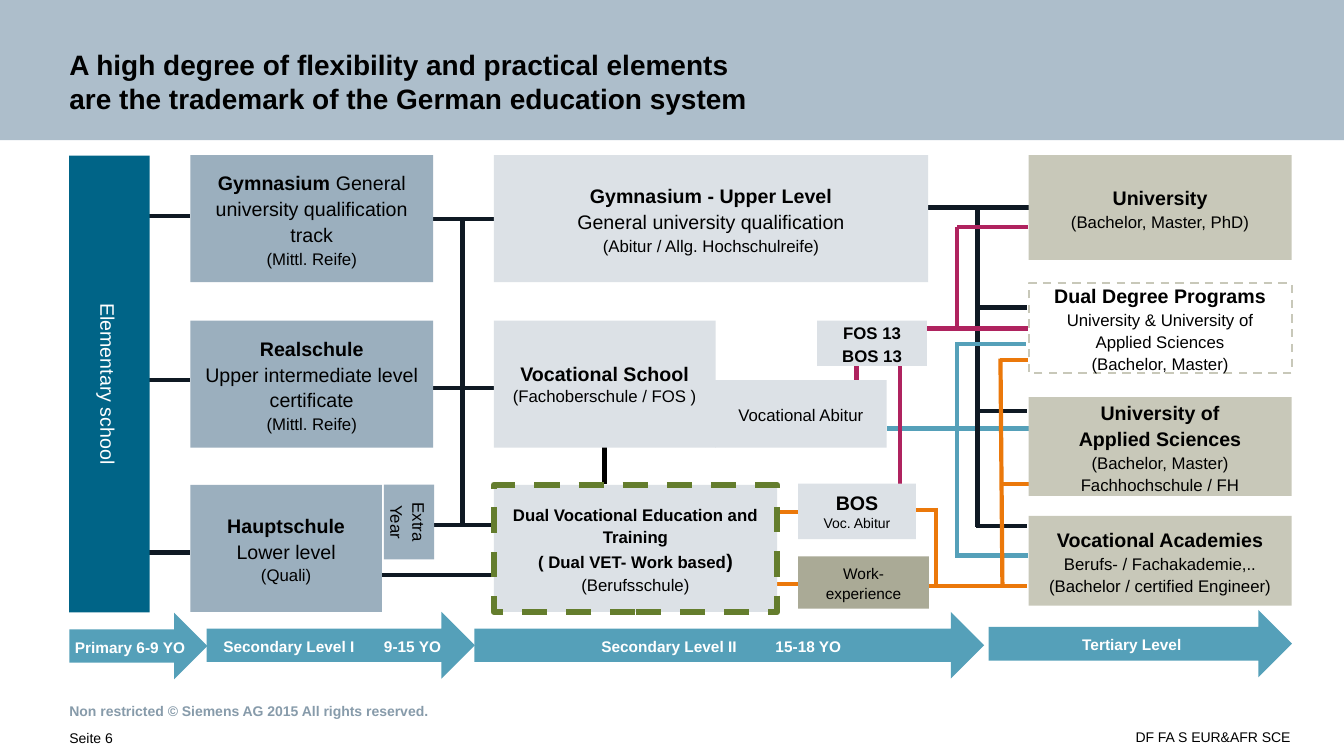
from dataclasses import dataclass

from lxml.etree import SubElement
from pptx import Presentation
from pptx.dml.color import RGBColor
from pptx.enum.dml import MSO_LINE
from pptx.enum.shapes import MSO_CONNECTOR, MSO_SHAPE
from pptx.enum.text import MSO_ANCHOR, PP_ALIGN
from pptx.oxml.ns import qn
from pptx.util import Cm, Pt


@dataclass(frozen=True)
class Theme:
    font: str = "Arial"
    black: str = "000000"
    white: str = "FFFFFF"
    banner: str = "ADBECB"
    footer: str = "879BAA"
    petrol: str = "006487"
    slate: str = "9BAFBE"
    light: str = "DCE1E6"
    sand: str = "C8C8B9"
    stone: str = "AAAA96"
    olive: str = "647D2D"
    navy: str = "0F1923"
    blue: str = "55A0B9"
    berry: str = "AF235F"
    orange: str = "EB780A"
    title: int = 20
    head: int = 14
    body: int = 12
    label: int = 11
    small: int = 10


T = Theme()
PADDING = (0.3, 0.15, 0.3, 0.15)
ROWS = (3.91, 8.08, 12.22)
ROW_H = 3.2
LEVEL_1_X, LEVEL_2_X, LEVEL_3_X = 4.8, 12.45, 25.93
LEVEL_3_W = 6.63


def rgb(color):
    return RGBColor.from_string(color)


def write(sp, paragraphs, size=T.body, bold=False, color=T.black, align=PP_ALIGN.CENTER,
          anchor=MSO_ANCHOR.MIDDLE, insets=PADDING, spacing=1.1, tab=None):
    """Each paragraph is a list of (text, size, bold) runs, or plain text."""
    tf = sp.text_frame
    tf.word_wrap = True
    tf.vertical_anchor = anchor
    tf.margin_left, tf.margin_top, tf.margin_right, tf.margin_bottom = map(Cm, insets)
    for i, runs in enumerate(paragraphs):
        p = tf.add_paragraph() if i else tf.paragraphs[0]
        p.alignment, p.line_spacing = align, spacing
        if tab:
            tabs = SubElement(p._p.get_or_add_pPr(), qn("a:tabLst"))
            SubElement(tabs, qn("a:tab"), pos=str(Cm(tab)), algn="l")
        if isinstance(runs, str):
            runs = [(runs, size, bold)]
        for text, run_size, run_bold in runs:
            for n, part in enumerate(text.split("\n")):
                if n:
                    p.add_line_break()
                r = p.add_run()
                r.text = part
                r.font.name, r.font.size, r.font.bold = T.font, Pt(run_size), run_bold
                r.font.color.rgb = rgb(color)


def head(text):
    return [(text, T.head, True)]


def lead(text):
    return [(text, T.head, False)]


def add_box(s, x, y, w, h, paragraphs=(), fill=None, border=None, shape=MSO_SHAPE.RECTANGLE,
            rotation=0, **fmt):
    sp = s.shapes.add_shape(shape, Cm(x), Cm(y), Cm(w), Cm(h))
    sp.shadow.inherit = False
    sp.rotation = rotation
    if fill:
        sp.fill.solid()
        sp.fill.fore_color.rgb = rgb(fill)
    else:
        sp.fill.background()
    if border:
        color, width = border
        sp.line.color.rgb = rgb(color)
        sp.line.width = Pt(width)
        sp.line.dash_style = MSO_LINE.DASH
    else:
        sp.line.fill.background()
    write(sp, paragraphs, **fmt)


def add_text(s, x, y, w, h, text, **fmt):
    write(s.shapes.add_textbox(Cm(x), Cm(y), Cm(w), Cm(h)), [text], **fmt)


def add_arrow(s, x, y, w, h, text, **fmt):
    add_box(s, x, y, w, h, [text], T.blue, shape=MSO_SHAPE.RIGHT_ARROW,
            size=T.label, bold=True, color=T.white, **fmt)


def add_lines(s, color, lines):
    for x1, y1, x2, y2 in lines:
        line = s.shapes.add_connector(MSO_CONNECTOR.STRAIGHT, Cm(x1), Cm(y1), Cm(x2), Cm(y2))
        line.line.color.rgb = rgb(color)
        line.line.width = Pt(3)
        SubElement(line._element.spPr, qn("a:effectLst"))


def add_frame(s):
    add_box(s, 0, 0, 33.88, 3.53, fill=T.banner)
    add_text(s, 0, 0, 33.88, 3.53,
             "A high degree of flexibility and practical elements\n"
             "are the trademark of the German education system",
             size=T.title, bold=True, align=PP_ALIGN.LEFT, anchor=MSO_ANCHOR.BOTTOM,
             insets=(1.75, 1.09, 5.89, 0.66), spacing=1.0)
    add_text(s, 0, 17.12, 33.88, 1.19, "Non restricted © Siemens AG 2015 All rights reserved.",
             size=T.small, bold=True, color=T.footer, align=PP_ALIGN.LEFT,
             insets=(1.75, 0.41, 8.92, 0), spacing=1.0)
    add_text(s, 0, 18.34, 4.9, 0.71, "Seite 6", size=T.small, align=PP_ALIGN.LEFT,
             anchor=MSO_ANCHOR.TOP, insets=(1.75, 0, 0, 0.33))
    add_text(s, 10.52, 18.31, 23.36, 0.71, "DF FA S EUR&AFR SCE", size=T.small,
             align=PP_ALIGN.RIGHT, anchor=MSO_ANCHOR.TOP, insets=(0, 0, 1.35, 0.33))


def add_routes(s):
    add_lines(s, T.blue, [(22.35, 10.8, 25.93, 10.8)])
    add_lines(s, T.black, [(15.24, 12.19, 15.24, 11.25)])
    # Elementary school to level I, level I to level II, upper level to tertiary
    add_lines(s, T.navy, [(3.4, y, LEVEL_1_X, y) for y in (5.44, 9.58, 13.92)])
    add_lines(s, T.navy, [
        (11.66, 5.54, 11.66, 13.26), (10.9, 5.52, 12.45, 5.52), (10.9, 9.78, 12.45, 9.78),
        (10.95, 13.23, 12.45, 13.23), (9.63, 14.48, 12.45, 14.48),
        (23.37, 5.23, 25.93, 5.23), (24.64, 5.26, 24.64, 13.28)])
    add_lines(s, T.navy, [(24.61, y, 25.88, y) for y in (7.75, 10.36, 13.26)])
    # FOS 13 / BOS 13
    add_lines(s, T.berry, [
        (21.59, 9.58, 21.59, 9.19), (22.68, 12.19, 22.68, 9.19), (24.13, 8.28, 24.13, 5.72),
        (24.13, 5.72, 25.91, 5.72), (23.32, 8.28, 25.91, 8.28)])
    # Vocational Abitur
    add_lines(s, T.blue, [
        (24.13, 8.66, 24.13, 14.05), (24.08, 8.66, 25.86, 8.66), (24.13, 14, 25.91, 14)])
    # Dual VET, BOS and work experience
    add_lines(s, T.orange, [
        (20.12, 14.71, 19.56, 14.71), (20.12, 12.9, 19.56, 12.9), (23.6, 12.85, 23.06, 12.85),
        (23.6, 12.8, 23.6, 14.78), (23.39, 14.76, 25.88, 14.76), (25.22, 9.04, 25.27, 14.81),
        (25.22, 9.07, 25.91, 9.07), (25.27, 12.19, 26.01, 12.19)])


def add_schools(s):
    # Primary and secondary level I
    add_box(s, -3, 8.66, 11.51, 2.03, ["Elementary school"], T.petrol, rotation=90,
            size=T.head, color=T.white)
    level_1 = [
        (6.12, [[("Gymnasium ", T.head, True),
                 ("General university qualification track", T.head, False)], "(Mittl. Reife)"]),
        (6.12, [head("Realschule"), lead("Upper intermediate level certificate"),
                "(Mittl. Reife)"]),
        (4.83, [head("Hauptschule"), lead("Lower level"), "(Quali)"])]
    for y, (w, text) in zip(ROWS, level_1):
        add_box(s, LEVEL_1_X, y, w, ROW_H, text, T.slate)
    add_box(s, 9.37, 12.52, 1.88, 1.27, ["Extra Year"], T.slate, rotation=90)

    # Secondary level II
    add_box(s, LEVEL_2_X, ROWS[0], 10.95, ROW_H,
            [head("Gymnasium - Upper Level"), lead("General university qualification"),
             "(Abitur / Allg. Hochschulreife)"], T.light)
    add_box(s, LEVEL_2_X, ROWS[1], 5.59, ROW_H,
            [head("Vocational School"), "(Fachoberschule / FOS )"], T.light, spacing=1.0)
    add_box(s, LEVEL_2_X, ROWS[2], 7.14, ROW_H,
            [[("Dual Vocational Education and Training", T.body, True)],
             [("( Dual VET- Work based", T.body, True), (")", T.head, True)],
             "(Berufsschule)"], T.light, border=(T.olive, 4.5))
    add_box(s, 18.03, 9.58, 4.32, 1.7, ["Vocational Abitur"], T.light)
    add_box(s, 20.6, ROWS[1], 2.77, 1.14, ["FOS 13 BOS 13"], T.light, bold=True)
    add_box(s, 20.12, 12.19, 2.97, 1.4, [head("BOS"), [("Voc. Abitur", T.small, False)]],
            T.light, spacing=1.0)
    add_box(s, 20.12, 14.02, 3.3, 1.32, ["Work- experience"], T.stone, size=T.label)

    # Tertiary level
    level_3 = [
        (3.91, 2.64, T.sand, None, [head("University"), "(Bachelor, Master, PhD)"]),
        (7.14, 2.26, None, (T.sand, 1.5),
         [head("Dual Degree Programs"),
          "University & University of Applied Sciences\n(Bachelor, Master)"]),
        (10.01, 2.49, T.sand, None,
         [head("University of"), head("Applied Sciences"),
          "(Bachelor, Master) Fachhochschule / FH"]),
        (13, 2.26, T.sand, None,
         [head("Vocational Academies"),
          "Berufs- / Fachakademie,..\n(Bachelor / certified Engineer)"])]
    for y, h, fill, border, text in level_3:
        add_box(s, LEVEL_3_X, y, LEVEL_3_W, h, text, fill, border)


def add_timeline(s):
    add_arrow(s, 1.75, 15.44, 3.48, 1.68, "Primary 6-9 YO", insets=(0, 0.15, 0, 0.15))
    add_arrow(s, 5.21, 15.42, 6.76, 1.68, "Secondary Level I\t9-15 YO",
              align=PP_ALIGN.LEFT, insets=(0.42, 0.15, 0, 0.15), tab=4.05)
    add_arrow(s, 11.96, 15.42, 12.85, 1.68, "Secondary Level II\t15-18 YO",
              align=PP_ALIGN.LEFT, insets=(3.2, 0.15, 0, 0.15), tab=4.39)
    add_arrow(s, 24.92, 15.37, 7.65, 1.7, "Tertiary Level")


def main():
    prs = Presentation()
    prs.slide_width, prs.slide_height = Cm(33.88), Cm(19.05)
    s = prs.slides.add_slide(prs.slide_layouts[6])
    add_frame(s)
    add_routes(s)
    add_schools(s)
    add_timeline(s)
    prs.save("out.pptx")


if __name__ == "__main__":
    main()
